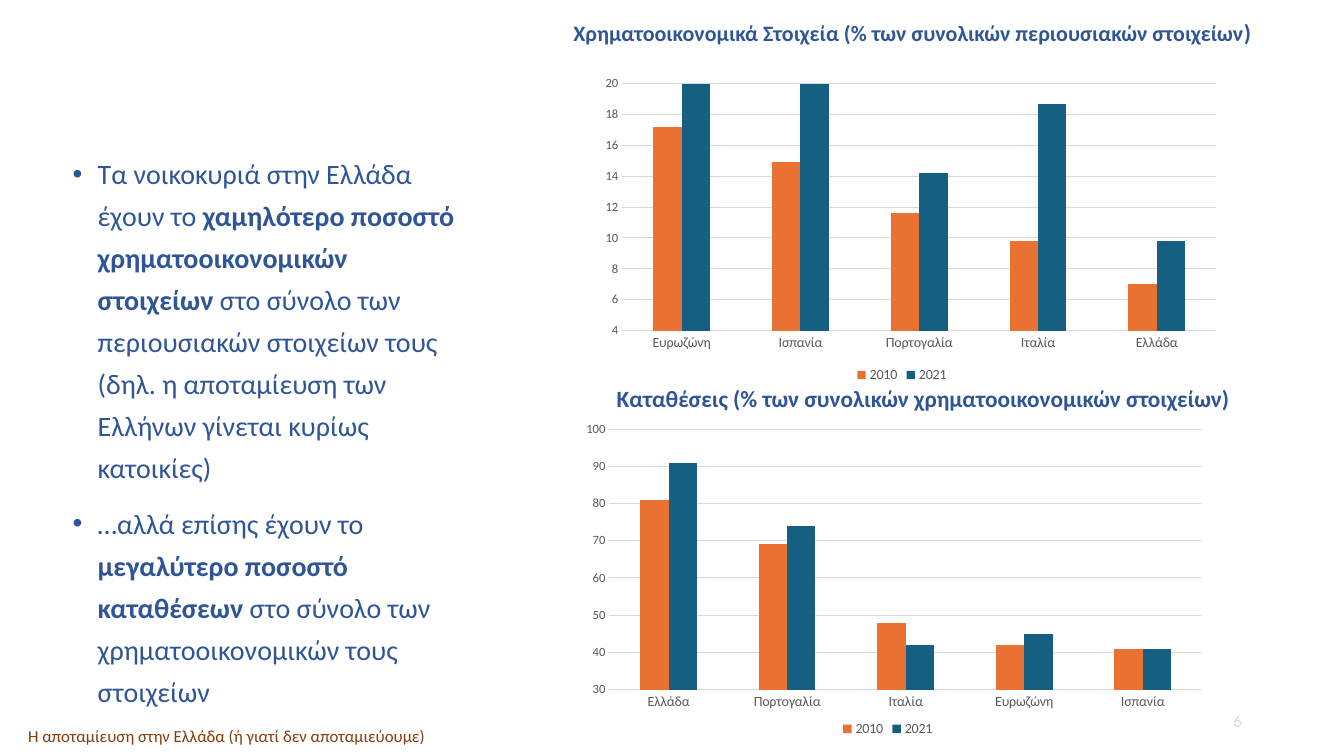
"""Build the slide on Greek household savings."""
import pptx
import pptx.chart.data
import pptx.dml.color
import pptx.enum.chart
import pptx.enum.text
import pptx.oxml
import pptx.oxml.ns
import pptx.util

Pt = pptx.util.Pt
Align = pptx.enum.text.PP_ALIGN
Anchor = pptx.enum.text.MSO_ANCHOR

THEME = {
    "font": "Calibri",
    "blue": "2F5597", "brown": "843C0B", "pale": "D9D9D9", "grey": "595959",
    "bars": ("E97132", "156082"),
    "list": 20, "head": 16.6, "long": 15.7, "note": 12, "label": 10, "value": 9,
}

HEAD = [("Χρηματοοικονομικά Στοιχεία (% των συνολικών περιουσιακών στοιχείων", "long", True),
        (")", "head", True)]
SECOND = [("Καταθέσεις (% των συνολικών χρηματοοικονομικών στοιχείων)", "head", True)]
POINTS = [
    [("Τα νοικοκυριά στην Ελλάδα έχουν το ", "list", False),
     ("χαμηλότερο ποσοστό χρηματοοικονομικών στοιχείων", "list", True),
     (" στο σύνολο των περιουσιακών στοιχείων τους (δηλ. η αποταμίευση των "
      "Ελλήνων γίνεται κυρίως κατοικίες)", "list", False)],
    [("…αλλά επίσης έχουν το ", "list", False),
     ("μεγαλύτερο ποσοστό καταθέσεων", "list", True),
     (" στο σύνολο των χρηματοοικονομικών τους στοιχείων", "list", False)],
]
FOOT = [("Η αποταμίευση στην Ελλάδα (ή γιατί δεν αποταμιεύουμε)", "note", False)]
PAGE = [("6", "note", False)]

YEARS = ("2010", "2021")
CHARTS = [
    {"box": (419.8, 48.2, 449.3, 228.2), "plot": (0.055, 0.051, 0.945, 0.773),
     "scale": (4, 20, 2),
     "rows": {"Ευρωζώνη": (17.2, 20.1), "Ισπανία": (14.9, 20.5),
              "Πορτογαλία": (11.6, 14.2), "Ιταλία": (9.8, 18.7), "Ελλάδα": (7, 9.8)}},
    {"box": (409.7, 301, 449.3, 228.2), "plot": (0.057, 0.024, 0.943, 0.816),
     "scale": (30, 100, 10),
     "rows": {"Ελλάδα": (81, 91), "Πορτογαλία": (69, 74), "Ιταλία": (48, 42),
              "Ευρωζώνη": (42, 45), "Ισπανία": (41, 41)}},
]


def assign(item, **values):
    for name, value in values.items():
        setattr(item, name, value)


def color(key):
    return pptx.dml.color.RGBColor.from_string(THEME.get(key, key))


def style(font, size, tint, bold=False):
    assign(font, name=THEME["font"], size=Pt(THEME[size]), bold=bold)
    font.color.rgb = color(tint)


def place(shape, box):
    assign(shape, **dict(zip(("left", "top", "width", "height"), map(Pt, box))))


def write(shape, paras, tint, align, anchor=Anchor.TOP, lead=1.0, gap=0):
    frame = shape.text_frame
    assign(frame, word_wrap=True, vertical_anchor=anchor,
           auto_size=pptx.enum.text.MSO_AUTO_SIZE.NONE)
    for index, runs in enumerate(paras):
        para = frame.add_paragraph() if index else frame.paragraphs[0]
        assign(para, alignment=align, line_spacing=lead,
               space_before=Pt(gap if index else 0))
        for text, size, bold in runs:
            run = para.add_run()
            run.text = text
            style(run.font, size, tint, bold)


def label(slide, box, runs, tint, align, **form):
    shape = slide.shapes.add_textbox(*map(Pt, box))
    write(shape, [runs], tint, align, **form)


def layout(chart, plot):
    parts = "".join(f'<c:{tag} val="{value}"/>' for tag, value in zip("xywh", plot))
    area = chart.element.xpath("c:chart/c:plotArea")[0]
    for old in area.xpath("c:layout"):
        area.remove(old)
    area.insert(0, pptx.oxml.parse_xml(
        f'<c:layout {pptx.oxml.ns.nsdecls("c")}><c:manualLayout>'
        '<c:layoutTarget val="inner"/><c:xMode val="edge"/><c:yMode val="edge"/>'
        f'{parts}</c:manualLayout></c:layout>'))


def rule(line):
    line.color.rgb = color("pale")
    line.width = Pt(0.75)


def draw(slide, box, plot, scale, rows):
    enum = pptx.enum.chart
    data = pptx.chart.data.CategoryChartData()
    data.categories = list(rows)
    for year, values in zip(YEARS, zip(*rows.values())):
        data.add_series(year, values)
    chart = slide.shapes.add_chart(
        enum.XL_CHART_TYPE.COLUMN_CLUSTERED, *map(Pt, box), data).chart
    assign(chart, has_title=False, has_legend=True)
    style(chart.font, "label", "000000")
    assign(chart.legend, position=enum.XL_LEGEND_POSITION.BOTTOM, include_in_layout=False)
    style(chart.legend.font, "label", "grey")
    for axis, size in ((chart.category_axis, "label"), (chart.value_axis, "value")):
        assign(axis, major_tick_mark=enum.XL_TICK_MARK.NONE,
               minor_tick_mark=enum.XL_TICK_MARK.NONE)
        style(axis.tick_labels.font, size, "grey")
    rule(chart.category_axis.format.line)
    axis = chart.value_axis
    low, high, step = scale
    assign(axis, minimum_scale=low, maximum_scale=high, major_unit=step,
           has_major_gridlines=True)
    axis.format.line.fill.background()
    rule(axis.major_gridlines.format.line)
    bars = chart.plots[0]
    assign(bars, gap_width=219, overlap=0, vary_by_categories=False)
    for series, tint in zip(bars.series, THEME["bars"]):
        series.format.fill.solid()
        series.format.fill.fore_color.rgb = color(tint)
    layout(chart, plot)


def main():
    deck = pptx.Presentation()
    assign(deck, slide_width=Pt(960), slide_height=Pt(540))
    slide = deck.slides.add_slide(deck.slide_layouts[1])
    title, body = slide.placeholders
    place(title, (381.6, 11.5, 540, 31.7))
    write(title, [HEAD], "blue", Align.CENTER, lead=0.9)
    place(body, (44.6, 102.3, 294.5, 401.7))
    write(body, POINTS, "blue", Align.LEFT, lead=1.25, gap=10)
    for para in body.text_frame.paragraphs:
        form = para._p.get_or_add_pPr()
        for name, value in {"marL": Pt(18), "indent": -Pt(18)}.items():
            form.set(name, str(int(value)))
    label(slide, (424.8, 272.9, 468.7, 28.8), SECOND, "blue", Align.CENTER, lead=0.9)
    label(slide, (678.2, 500.4, 216, 28.8), PAGE, "pale", Align.RIGHT, anchor=Anchor.MIDDLE)
    label(slide, (0, 511.2, 324, 28.8), FOOT, "brown", Align.CENTER, anchor=Anchor.MIDDLE)
    for chart in CHARTS:
        draw(slide, **chart)
    deck.save("out.pptx")


if __name__ == "__main__":
    main()
